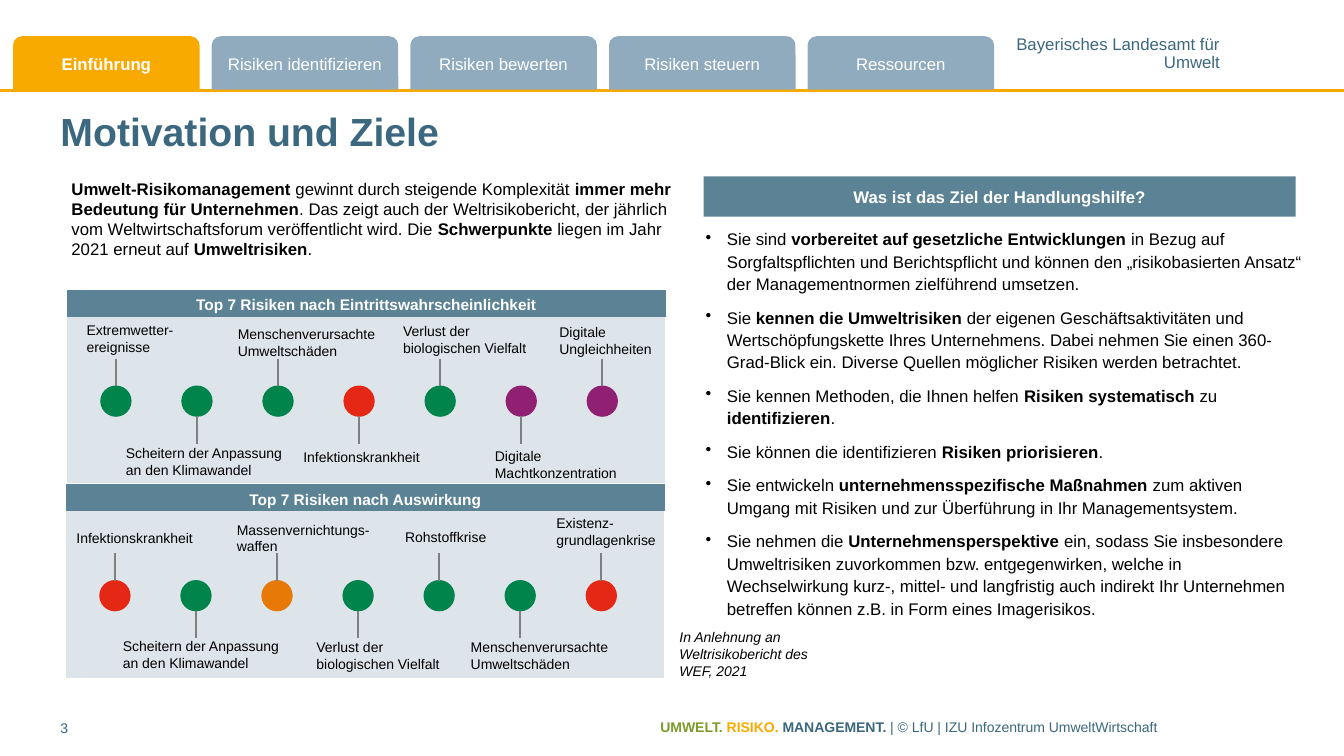
import pptx
import pptx.util
import pptx.dml.color
import pptx.enum.shapes
import pptx.enum.text
import pptx.oxml.ns
from lxml import etree

WIDTH, HEIGHT = 13.33, 7.5
FONT = "Arial"
COLOURS = {
    "amber": "F9AA00", "tab": "90ABBE", "blue": "3B687F", "bar": "5C8395",
    "panel": "DEE5EA", "stem": "808080", "leaf": "7B9C2A", "black": "000000",
    "white": "FFFFFF", "green": "00844B", "red": "E52716",
    "purple": "902172", "orange": "E77906",
}
TABS = ["**Einführung**", "Risiken identifizieren", "Risiken bewerten",
        "Risiken steuern", "Ressourcen"]
AGENCY = ["Bayerisches Landesamt für", "Umwelt"]
TITLE = "**Motivation und Ziele**"
INTRO = (
    "**Umwelt-Risikomanagement** gewinnt durch steigende Komplexität "
    "**immer mehr Bedeutung für Unternehmen**. Das zeigt auch der Weltrisikobericht, "
    "der jährlich vom Weltwirtschaftsforum veröffentlicht wird. Die **Schwerpunkte** "
    "liegen im Jahr 2021 erneut auf **Umweltrisiken**."
)
GOAL_HEADING = "**Was ist das Ziel der Handlungshilfe?**"
GOALS = [
    "Sie sind **vorbereitet auf gesetzliche Entwicklungen** in Bezug auf "
    "Sorgfaltspflichten und Berichtspflicht und können den „risikobasierten Ansatz“ "
    "der Managementnormen zielführend umsetzen.",
    "Sie **kennen die Umweltrisiken** der eigenen Geschäftsaktivitäten und "
    "Wertschöpfungskette Ihres Unternehmens. Dabei nehmen Sie einen 360-Grad-Blick "
    "ein. Diverse Quellen möglicher Risiken werden betrachtet.",
    "Sie kennen Methoden, die Ihnen helfen **Risiken systematisch** zu "
    "**identifizieren**.",
    "Sie können die identifizieren **Risiken priorisieren**.",
    "Sie entwickeln **unternehmensspezifische Maßnahmen** zum aktiven Umgang mit "
    "Risiken und zur Überführung in Ihr Managementsystem.",
    "Sie nehmen die **Unternehmensperspektive** ein, sodass Sie insbesondere "
    "Umweltrisiken zuvorkommen bzw. entgegenwirken, welche in Wechselwirkung kurz-, "
    "mittel- und langfristig auch indirekt Ihr Unternehmen betreffen können z.B. in "
    "Form eines Imagerisikos.",
]
CREDIT = "In Anlehnung an Weltrisikobericht des WEF, 2021"
FOOTER = [("**UMWELT. **", "leaf"), ("**RISIKO. **", "amber"),
          ("**MANAGEMENT. **", "blue"),
          ("| © LfU | IZU\u00a0Infozentrum UmweltWirtschaft", "blue")]
PAGE_NUMBER = "3"

# fmt: off
PANELS = [
    ("**Top 7 Risiken nach Eintrittswahrscheinlichkeit**", 0.67, 2.88, [
        ("green", ["Extremwetter-ereignisse"], 0.09, 0.26, 1.08),
        ("green", ["Scheitern der Anpassung an den Klimawandel"], 0.48, 1.48, 1.81),
        ("green", ["Menschenverursachte Umweltschäden"], 1.59, 0.3, 1.59),
        ("red", ["Infektionskrankheit"], 2.24, 1.52, 1.5),
        ("green", ["Verlust der biologischen Vielfalt"], 3.23, 0.27, 1.55),
        ("purple", ["Digitale Machtkonzentration"], 4.14, 1.51, 1.48),
        ("purple", ["Digitale", "Ungleichheiten"], 4.78, 0.28, 1.13),
    ]),
    ("**Top 7 Risiken nach Auswirkung**", 0.66, 4.81, [
        ("red", ["Infektionskrankheit"], 0, 0.39, 1.5),
        ("green", ["Scheitern der Anpassung an den Klimawandel"], 0.46, 1.47, 1.81),
        ("orange", ["Massenvernichtungs-waffen"], 1.59, 0.31, 1.59),
        ("green", ["Verlust der biologischen Vielfalt"], 2.38, 1.48, 1.55),
        ("green", ["Rohstoffkrise"], 3.26, 0.38, 1.2),
        ("green", ["Menschenverursachte Umweltschäden"], 3.91, 1.48, 1.59),
        ("red", ["Existenz-grundlagenkrise"], 4.76, 0.25, 1.19),
    ]),
]
# fmt: on

inches = pptx.util.Inches
points = pptx.util.Pt
ALIGN = pptx.enum.text.PP_ALIGN
ANCHOR = pptx.enum.text.MSO_ANCHOR
SHAPES = pptx.enum.shapes.MSO_SHAPE

presentation = pptx.Presentation()
presentation.slide_width, presentation.slide_height = inches(WIDTH), inches(HEIGHT)
slide = presentation.slides.add_slide(presentation.slide_layouts[6])


def colour(name):
    return pptx.dml.color.RGBColor.from_string(COLOURS[name])


def add_bullet(paragraph):
    properties = paragraph._p.get_or_add_pPr()
    properties.set("marL", str(inches(0.21)))
    properties.set("indent", str(inches(-0.21)))
    bullet = etree.SubElement(properties, pptx.oxml.ns.qn("a:buChar"))
    bullet.set("char", "•")


def write(shape, paragraphs, size=12, color="black", align=ALIGN.LEFT, anchor=ANCHOR.TOP,
          insets=(0.1, 0.05), italic=False, wrap=True, bullets=False, spacing=None, before=0):
    frame = shape.text_frame
    frame.word_wrap = wrap
    frame.vertical_anchor = anchor
    frame.margin_left = frame.margin_right = inches(insets[0])
    frame.margin_top = frame.margin_bottom = inches(insets[1])
    for index, content in enumerate(paragraphs):
        paragraph = frame.add_paragraph() if index else frame.paragraphs[0]
        if bullets:
            add_bullet(paragraph)
        paragraph.alignment = align
        if spacing:
            paragraph.line_spacing = spacing
        if index and before:
            paragraph.space_before = points(before)
        pieces = [(content, color)] if isinstance(content, str) else content
        for marked, piece_color in pieces:
            for position, words in enumerate(marked.split("**")):
                if words:
                    run = paragraph.add_run()
                    run.text = words
                    run.font.name, run.font.size = FONT, points(size)
                    run.font.bold, run.font.italic = position % 2 == 1, italic
                    run.font.color.rgb = colour(piece_color)


def add_text(box, paragraphs, **formatting):
    write(slide.shapes.add_textbox(*map(inches, box)), paragraphs, **formatting)


def add_block(kind, box, fill, outlined=False):
    shape = slide.shapes.add_shape(kind, *map(inches, box))
    shape.shadow.inherit = False
    shape.fill.solid()
    shape.fill.fore_color.rgb = colour(fill)
    if outlined:
        shape.line.color.rgb = colour(fill)
        shape.line.width = points(0.75)
    else:
        shape.line.fill.background()
    return shape


def add_line(start, end, color, width):
    line = slide.shapes.add_connector(
        pptx.enum.shapes.MSO_CONNECTOR.STRAIGHT, *map(inches, start + end))
    line.line.color.rgb = colour(color)
    line.line.width = points(width)
    etree.SubElement(line._element.spPr, pptx.oxml.ns.qn("a:effectLst"))


def add_panel(heading, left, top, risks):
    width, bar_height, bottom = 5.93, 0.26, 1.91
    first, pitch, middle, radius, stem = 0.48, 0.804, 1.1, 0.15, 0.27
    add_block(SHAPES.RECTANGLE, (left, top + 0.05, width - 0.01, bottom - 0.05), "panel", True)
    bar = add_block(SHAPES.RECTANGLE, (left, top, width, bar_height), "bar", True)
    write(bar, [heading], size=11, color="white", align=ALIGN.CENTER)
    for column, (dot, label, label_left, label_top, label_width) in enumerate(risks):
        x, y = left + first + column * pitch, top + middle
        direction = 1 if column % 2 else -1
        add_block(SHAPES.OVAL, (x - radius, y - radius, 2 * radius, 2 * radius), dot, True)
        add_line((x, y + direction * radius), (x, y + direction * (radius + stem)), "stem", 1.5)
        add_text((left + label_left, top + label_top, label_width, 0.44), label, size=10)


add_line((0, 0.9), (WIDTH, 0.9), "amber", 2)
add_text((10.07, 0.37, 2.03, 0.34), AGENCY, color="blue", align=ALIGN.RIGHT,
         insets=(0, 0), wrap=False, spacing=0.85)
for column, name in enumerate(TABS):
    tab = add_block(SHAPES.ROUND_2_SAME_RECTANGLE, (0.13 + column * 1.97, 0.36, 1.85, 0.53),
                    "tab" if column else "amber")
    write(tab, [name], color="white", align=ALIGN.CENTER, anchor=ANCHOR.MIDDLE,
          insets=(0.04, 0.05))

add_text((0.6, 1.02, 12.31, 0.55), [TITLE], size=28, color="blue",
         anchor=ANCHOR.MIDDLE, insets=(0, 0.05))
add_text((0.61, 1.72, 6.21, 0.91), [INTRO])
goal_bar = add_block(SHAPES.RECTANGLE, (6.98, 1.75, 5.87, 0.4), "bar")
write(goal_bar, [GOAL_HEADING], color="white", align=ALIGN.CENTER, insets=(0.1, 0.1))
add_text((7, 2.2, 5.93, 2.99), GOALS, insets=(0, 0.05), bullets=True,
         spacing=points(16), before=8)
for panel in PANELS:
    add_panel(*panel)
add_text((6.64, 6.19, 1.61, 0.61), [CREDIT], size=10, italic=True)
add_text((6.55, 7.08, 6.36, 0.31), [FOOTER], size=10, insets=(0, 0.05))
add_text((0.6, 7.09, 0.7, 0.31), [PAGE_NUMBER], size=10, color="blue", insets=(0, 0.05))

presentation.save("out.pptx")
